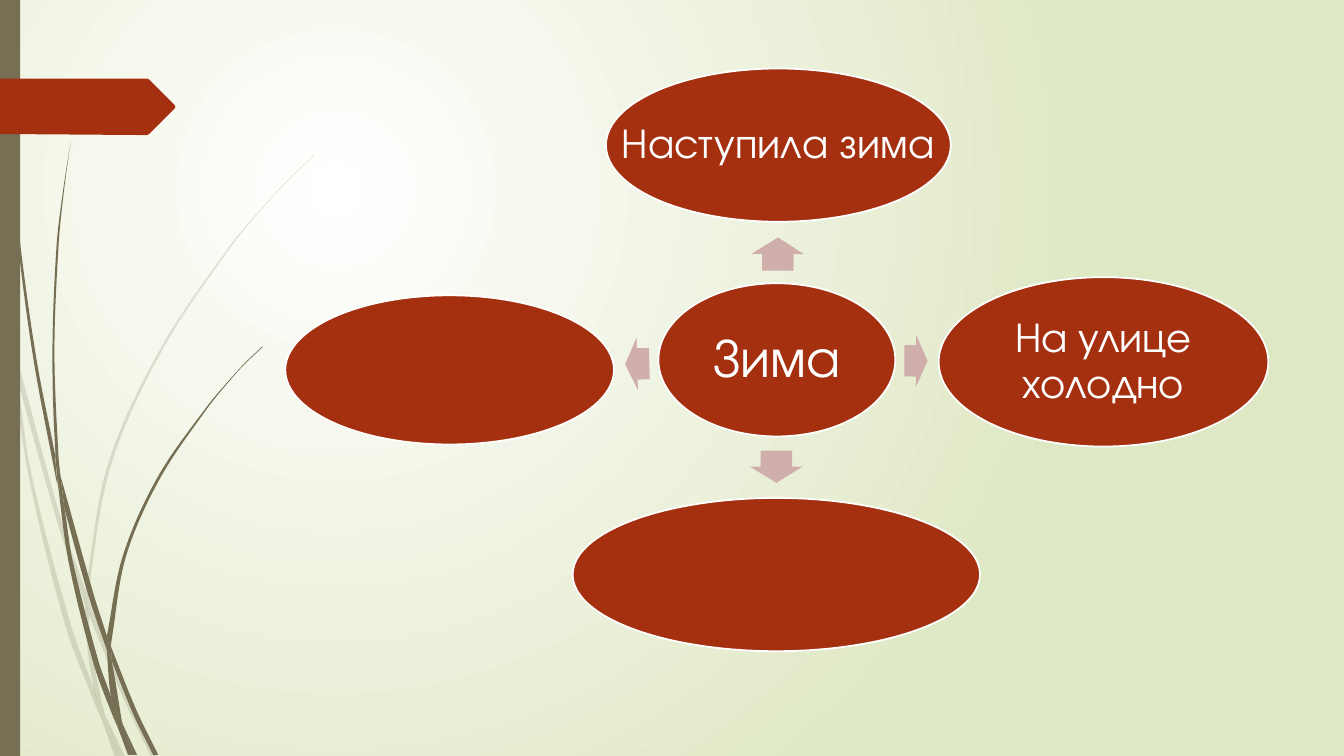
import math

import pptx
import pptx.dml.color
import pptx.enum.shapes
import pptx.enum.text
import pptx.oxml
import pptx.oxml.ns
import pptx.util

RGBColor = pptx.dml.color.RGBColor
SHAPE = pptx.enum.shapes.MSO_SHAPE
qn = pptx.oxml.ns.qn

PX = 9144  # 100 px to the inch
WIDTH, HEIGHT = 1333, 750
FONT = "TeX Gyre Adventor"
WHITE = RGBColor(0xFF, 0xFF, 0xFF)
PALE_GREEN = RGBColor(0xDF, 0xE8, 0xC4)
OLIVE = RGBColor(0x76, 0x6F, 0x54)
RUST = RGBColor(0xA5, 0x30, 0x10)
ROSE = RGBColor(0xCF, 0xAE, 0xAB)

# Ellipses: left, top, width, height, text, size in points, wrapped
ELLIPSES = [
    (653, 281, 235, 152, "Зима", 39, False),
    (601, 68, 342, 152, "Наступила зима", 30, False),
    (931, 275, 327, 168, "На улице холодно", 30, True),
    (568, 494, 404, 152, "", 30, False),
    (283, 293, 326, 148, "", 30, False),
]

# Arrows between them: left, top, width, height, rotation
ARROWS = [
    (755, 226, 33, 52, 270.4),
    (897, 332, 23, 52, 0.3),
    (754, 437, 32, 52, 90),
    (620, 335, 24, 52, 178.4),
]

BANNER = [(0, 78), (146, 78), (148, 79), (173, 104), (174, 106), (173, 108),
          (148, 133), (146, 134), (136, 134), (0, 133)]

# Grass pieces: one edge, then the other edge back to the start
PALE_GRASS = [
    ([(11, 350), (9, 322), (0, 282)], [(0, 299), (10, 344), (11, 350)]),
    ([(17, 376), (58, 522), (84, 599)], [(85, 586), (62, 520), (14, 345)]),
    ([(155, 751), (127, 692), (92, 607), (88, 596)], [(88, 610), (123, 694), (150, 751)]),
    ([(119, 751), (124, 751)], [(105, 711), (119, 751)]),
    ([(99, 707), (93, 683), (70, 619), (31, 469), (17, 376), (11, 350)],
     [(11, 350), (28, 470), (65, 621), (92, 693), (101, 714)]),
    ([(84, 599), (87, 646), (93, 683), (96, 692), (105, 711)],
     [(103, 706), (91, 646), (88, 610), (88, 608), (84, 599)]),
    ([(88, 596), (88, 584), (110, 462), (160, 349), (229, 245), (268, 198),
      (290, 175), (312, 154)],
     [(312, 153), (289, 175), (268, 197), (228, 244), (158, 348), (107, 461),
      (85, 584), (85, 586)]),
    ([(101, 714), (114, 751)], [(119, 751), (101, 714)]),
    ([(88, 608), (88, 610), (88, 596)], [(85, 586), (84, 599), (88, 608)]),
    ([(93, 683), (99, 707), (101, 714), (119, 751)],
     [(119, 751), (105, 711), (96, 692), (93, 683)]),
]
DARK_GRASS = [
    ([(3, 0), (4, 48), (7, 110), (17, 233), (33, 355), (56, 477), (57, 481)],
     [(55, 457), (55, 453), (36, 355), (19, 232), (8, 109), (5, 48), (4, 0)]),
    ([(64, 505), (88, 592), (106, 645)], [(106, 633), (106, 631), (93, 590), (60, 472)]),
    ([(111, 656), (132, 708), (152, 749)],
     [(157, 749), (136, 706), (113, 649), (110, 641)]),
    ([(116, 717), (110, 691), (98, 657), (72, 556), (64, 505), (57, 477)],
     [(57, 477), (68, 557), (93, 659), (111, 708), (117, 722)]),
    ([(60, 472), (58, 453), (54, 349), (58, 245), (63, 193), (70, 141)],
     [(70, 141), (62, 193), (56, 245), (52, 349), (55, 449), (60, 472)]),
    ([(133, 749), (136, 749)], [(122, 719), (133, 749)]),
    ([(57, 477), (64, 505)], [(60, 472), (55, 449), (55, 453), (57, 477)]),
    ([(110, 641), (111, 633), (125, 552), (158, 476), (205, 406), (231, 374),
      (245, 359), (261, 344)],
     [(260, 344), (245, 358), (231, 373), (204, 405), (156, 474), (122, 551), (106, 631)]),
    ([(117, 722), (127, 749)], [(131, 749), (117, 722)]),
    ([(106, 645), (110, 691), (116, 706), (122, 719)],
     [(121, 716), (111, 656), (109, 651), (106, 645)]),
    ([(106, 645), (109, 651), (111, 656)], [(110, 641), (106, 631), (106, 633), (106, 645)]),
    ([(110, 691), (116, 717), (117, 722), (130, 749)],
     [(133, 749), (122, 719), (116, 706), (110, 691)]),
]


def curve_handles(edge):
    """Return two handles and an end point for each stretch of a smooth edge."""
    padded = [edge[0], *edge, edge[-1]]
    points = []
    for before, start, end, after in zip(padded, padded[1:], padded[2:], padded[3:]):
        reach = math.dist(start, end) / 3

        def handle(origin, tail, head, sign):
            factor = sign * reach / (math.dist(tail, head) or 1)
            return tuple(o + factor * (h - t) for o, t, h in zip(origin, tail, head))

        points += [handle(start, before, end, 1), handle(end, start, after, -1), end]
    return points


def paint(shape, color, outline=None, opacity=100):
    shape.shadow.inherit = False
    shape.fill.solid()
    shape.fill.fore_color.rgb = color
    if opacity < 100:
        color_element = shape._element.spPr.find(qn("a:solidFill"))[0]
        color_element.append(pptx.oxml.parse_xml(
            f'<a:alpha {pptx.oxml.ns.nsdecls("a")} val="{opacity * 1000}"/>'))
    if outline is None:
        shape.line.fill.background()
    else:
        shape.line.color.rgb = outline
        shape.line.width = pptx.util.Pt(1.25)


def add_outline(slide, points, color, opacity=100):
    scaled = [(x * PX, y * PX) for x, y in points]
    builder = slide.shapes.build_freeform(*scaled[0], scale=1.0)
    builder.add_line_segments(scaled[1:], close=True)
    shape = builder.convert_to_shape()
    paint(shape, color, opacity=opacity)
    return shape


def add_grass(slide, edge, return_edge, opacity):
    corner = return_edge[0]
    points = [edge[0], *curve_handles(edge), edge[-1], corner, corner,
              *curve_handles(return_edge)]
    shape = add_outline(slide, points, OLIVE, opacity)
    # Turn every three straight steps into one curve
    outline = next(shape._element.iter(qn("a:path")))
    steps = iter(outline.findall(qn("a:lnTo")))
    for triple in zip(steps, steps, steps):
        curve = outline.makeelement(qn("a:cubicBezTo"))
        triple[0].addprevious(curve)
        for step in triple:
            curve.append(step[0])
            outline.remove(step)


def add_shape(slide, kind, box, color, outline=None):
    shape = slide.shapes.add_shape(kind, *(PX * value for value in box))
    paint(shape, color, outline)
    return shape


def write_text(shape, text, size, color=WHITE, wrap=False):
    frame = shape.text_frame
    frame.word_wrap = wrap
    frame.vertical_anchor = pptx.enum.text.MSO_ANCHOR.MIDDLE
    frame.margin_left = frame.margin_right = 4 * PX
    frame.margin_top = frame.margin_bottom = 4 * PX
    paragraph = frame.paragraphs[0]
    paragraph.alignment = pptx.enum.text.PP_ALIGN.CENTER
    paragraph.line_spacing = 0.9
    run = paragraph.add_run()
    run.text = text
    run.font.name = FONT
    run.font.size = pptx.util.Pt(size)
    run.font.color.rgb = color


def add_background(slide):
    fill = slide.background.fill
    fill.gradient()
    for stop, color, position in zip(fill.gradient_stops, (WHITE, PALE_GREEN), (0, 1)):
        stop.color.rgb = color
        stop.position = position
    gradient = next(slide.element.iter(qn("a:gradFill")))
    gradient.replace(gradient.find(qn("a:lin")), pptx.oxml.parse_xml(
        f'<a:path {pptx.oxml.ns.nsdecls("a")} path="circle">'
        '<a:fillToRect l="50000" t="50000" r="100000" b="100000"/></a:path>'))


def main():
    presentation = pptx.Presentation()
    presentation.slide_width, presentation.slide_height = WIDTH * PX, HEIGHT * PX
    slide = presentation.slides.add_slide(presentation.slide_layouts[6])
    add_background(slide)

    # Grass, side bar and banner
    for pieces, opacity in ((PALE_GRASS, 20), (DARK_GRASS, 100)):
        for edge, return_edge in pieces:
            add_grass(slide, edge, return_edge, opacity)
    add_shape(slide, SHAPE.RECTANGLE, (0, 0, 20, HEIGHT), OLIVE)
    add_outline(slide, BANNER, RUST)

    # Diagram
    for *box, rotation in ARROWS:
        arrow = add_shape(slide, SHAPE.RIGHT_ARROW, box, ROSE)
        arrow.adjustments[0], arrow.adjustments[1] = 0.6, 0.5
        arrow.rotation = rotation
    for *box, text, size, wrap in ELLIPSES:
        ellipse = add_shape(slide, SHAPE.OVAL, box, RUST, outline=WHITE)
        if text:
            write_text(ellipse, text, size, wrap=wrap)

    presentation.save("out.pptx")


if __name__ == "__main__":
    main()
